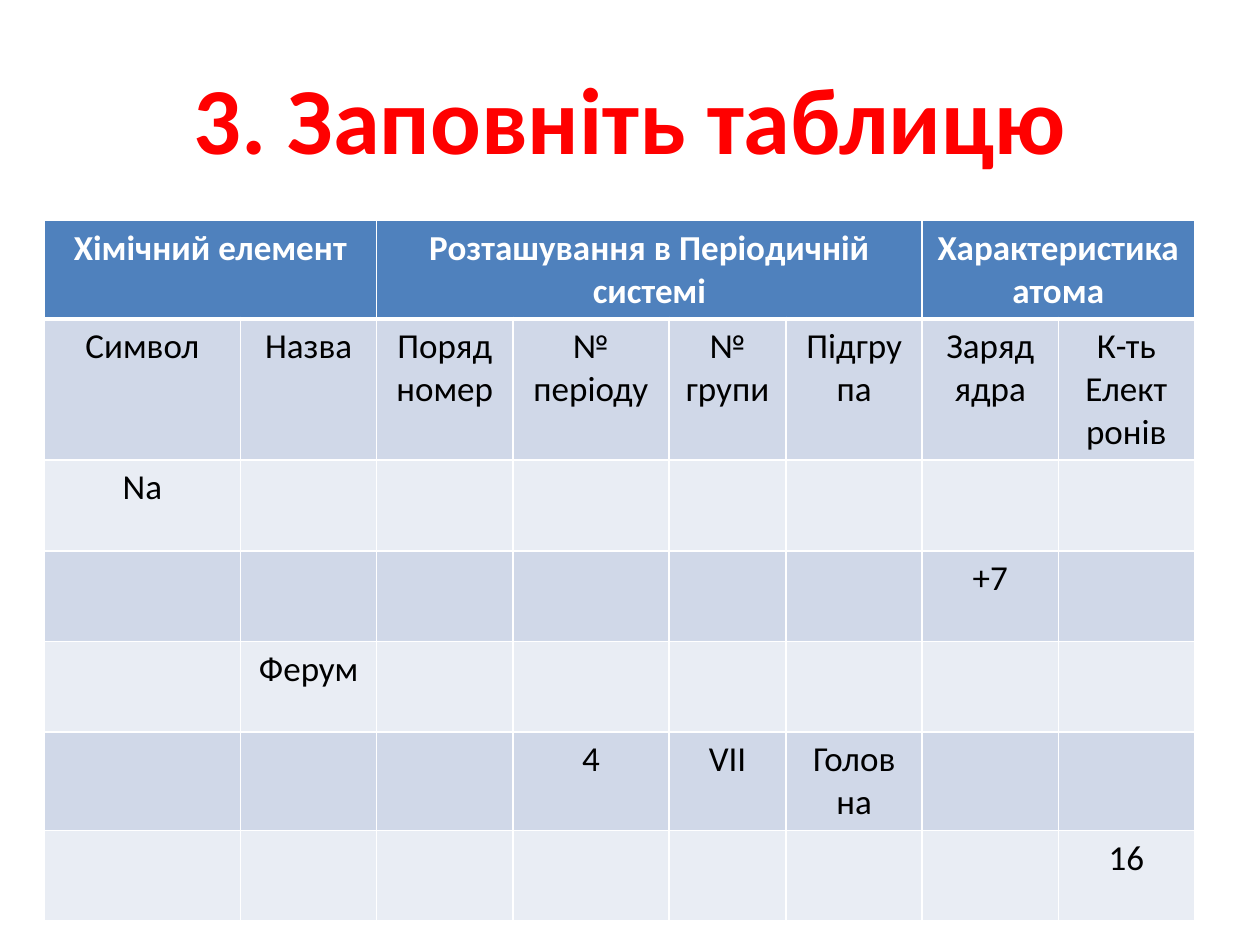
from lxml.etree import SubElement
from pptx import Presentation
from pptx.dml.color import RGBColor
from pptx.enum.text import MSO_ANCHOR, PP_ALIGN
from pptx.oxml.ns import qn
from pptx.util import Inches, Pt

RED = RGBColor(0xFF, 0x00, 0x00)
WHITE = RGBColor(0xFF, 0xFF, 0xFF)
BLACK = RGBColor(0x00, 0x00, 0x00)
BLUE = RGBColor(0x4F, 0x81, 0xBD)
BANDS = (RGBColor(0xE9, 0xED, 0xF4), RGBColor(0xD0, 0xD8, 0xE8))
FONT = "Calibri"

# Content: each line break starts a new paragraph
TITLE = "3. Заповніть таблицю"
GROUPS = [  # heading, columns covered
    ("Хімічний елемент", 2),
    ("Розташування в Періодичній системі", 4),
    ("Характеристика атома", 2),
]
ROWS = [
    ["Символ", "Назва", "Поряд\nномер", "№ періоду", "№\nгрупи",
     "Підгрупа", "Заряд ядра", "К-ть\nЕлект\nронів"],
    ["Na", "", "", "", "", "", "", ""],
    ["", "", "", "", "", "", "+7", ""],
    ["", "Ферум", "", "", "", "", "", ""],
    ["", "", "", "4", "VII", "Голов\nна", "", ""],
    ["", "", "", "", "", "", "", "16"],
]
COLUMN_WIDTHS = [1.56, 1.08, 1.08, 1.24, 0.93, 1.08, 1.08, 1.08]
ROW_HEIGHT = 0.72


def write(frame, text, size, color, bold):
    for index, line in enumerate(text.split("\n")):
        paragraph = frame.add_paragraph() if index else frame.paragraphs[0]
        paragraph.alignment = PP_ALIGN.CENTER
        if not line:
            paragraph.font.size = Pt(size)
            continue
        run = paragraph.add_run()
        run.text = line
        run.font.name = FONT
        run.font.size = Pt(size)
        run.font.bold = bold
        run.font.color.rgb = color


def style_cell(cell, fill, bottom_width=1):
    properties = cell._tc.get_or_add_tcPr()
    for side, width in (("L", 1), ("R", 1), ("T", 1), ("B", bottom_width)):
        border = SubElement(properties, qn(f"a:ln{side}"), w=str(Pt(width)))
        solid = SubElement(border, qn("a:solidFill"))
        SubElement(solid, qn("a:srgbClr"), val=str(WHITE))
    cell.fill.solid()
    cell.fill.fore_color.rgb = fill


prs = Presentation()
prs.slide_width, prs.slide_height = Inches(10), Inches(7.5)
slide = prs.slides.add_slide(prs.slide_layouts[5])

# Title
title = slide.shapes.title
title.left, title.top = Inches(0.5), Inches(0.3)
title.width, title.height = Inches(9), Inches(1.25)
title.text_frame.vertical_anchor = MSO_ANCHOR.MIDDLE
write(title.text_frame, TITLE, 54, RED, True)

# Table grid
row_count = len(ROWS) + 1
table = slide.shapes.add_table(
    row_count, len(COLUMN_WIDTHS), Inches(0.35), Inches(1.75),
    Inches(sum(COLUMN_WIDTHS)), Inches(ROW_HEIGHT * row_count)).table
for column, width in zip(table.columns, COLUMN_WIDTHS):
    column.width = Inches(width)
for row in table.rows:
    row.height = Inches(ROW_HEIGHT)

# Group headings
start = 0
for heading, span in GROUPS:
    for column in range(start, start + span):
        style_cell(table.cell(0, column), BLUE, bottom_width=3)
    group = table.cell(0, start)
    group.merge(table.cell(0, start + span - 1))
    write(group.text_frame, heading, 20, WHITE, True)
    start += span

# Column headings and rows to fill in
for r, values in enumerate(ROWS, start=1):
    for c, value in enumerate(values):
        cell = table.cell(r, c)
        style_cell(cell, BANDS[r % 2])
        write(cell.text_frame, value, 20, BLACK, False)

prs.save("out.pptx")
